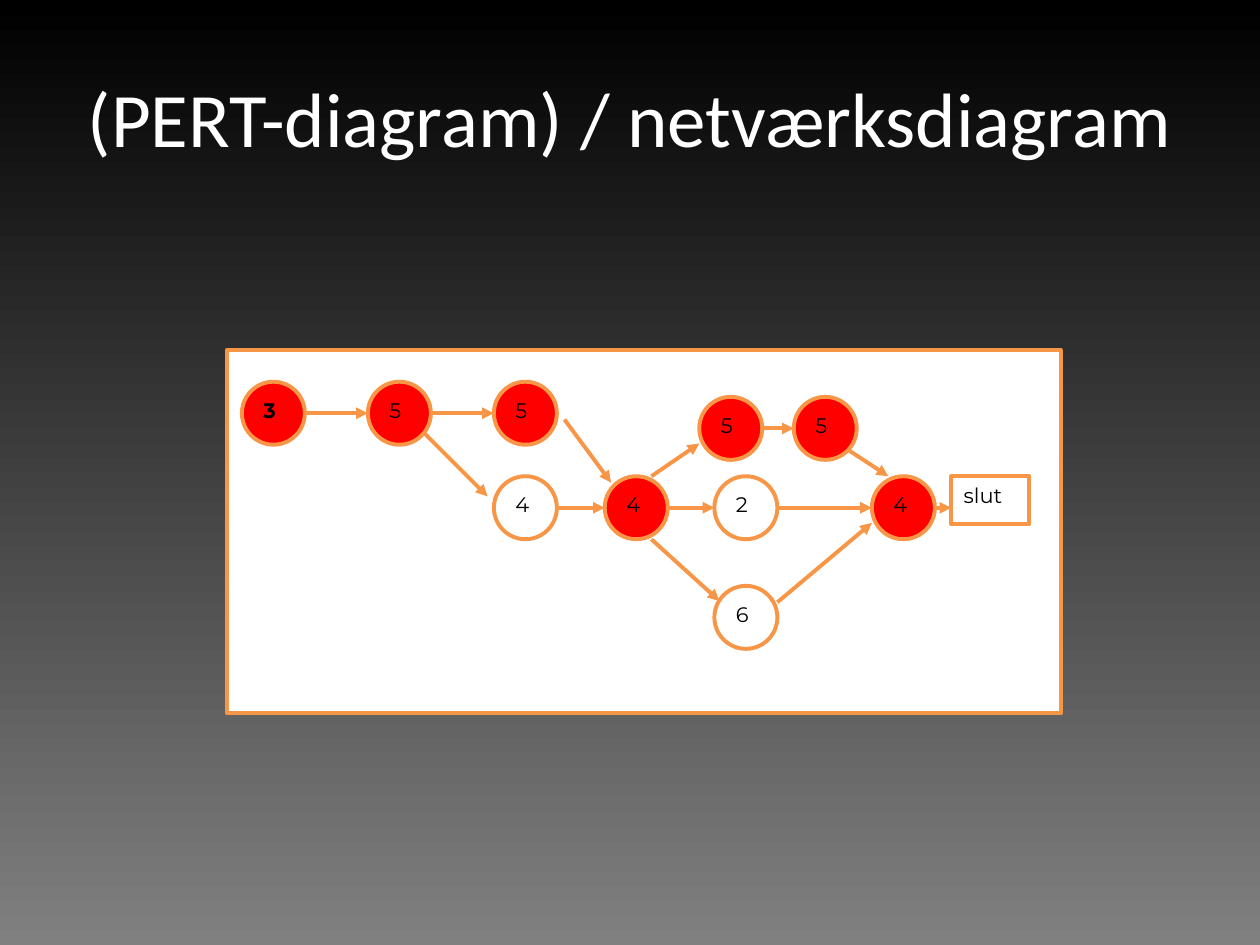
from pptx import Presentation
from pptx.dml.color import RGBColor
from pptx.enum.shapes import MSO_CONNECTOR, MSO_SHAPE
from pptx.enum.text import MSO_ANCHOR, PP_ALIGN
from pptx.oxml.ns import qn
from pptx.util import Inches, Pt
from lxml.etree import SubElement

ORANGE, RED, WHITE, BLACK = "F79646", "FF0000", "FFFFFF", "000000"
DIAMETER = 0.5
TOP_ROW, UPPER_ROW, MIDDLE_ROW, BOTTOM_ROW = 3.03, 3.15, 3.78, 4.65

# left, top, duration, fill
TASKS = [
    (1.92, TOP_ROW, "3", RED),
    (2.92, TOP_ROW, "5", RED),
    (3.92, TOP_ROW, "5", RED),
    (3.92, MIDDLE_ROW, "4", WHITE),
    (4.8, MIDDLE_ROW, "4", RED),
    (5.55, UPPER_ROW, "5", RED),
    (6.3, UPPER_ROW, "5", RED),
    (5.67, MIDDLE_ROW, "2", WHITE),
    (5.67, BOTTOM_ROW, "6", WHITE),
    (6.92, MIDDLE_ROW, "4", RED),
]

# row top, start x, end x
LEVEL_ARROWS = [
    (TOP_ROW, 2.42, 2.92),
    (TOP_ROW, 3.42, 3.92),
    (UPPER_ROW, 6.05, 6.3),
    (MIDDLE_ROW, 4.42, 4.8),
    (MIDDLE_ROW, 5.3, 5.67),
    (MIDDLE_ROW, 6.17, 6.92),
    (MIDDLE_ROW, 7.42, 7.55),
]

# start x, start y, end x, end y
SLOPING_ARROWS = [
    (3.37, 3.44, 3.87, 3.94),
    (4.48, 3.33, 4.85, 3.83),
    (5.17, 3.78, 5.55, 3.52),
    (5.17, 4.28, 5.71, 4.77),
    (6.17, 4.78, 6.92, 4.15),
    (6.67, 3.53, 7.05, 3.78),
]


def rgb(color):
    return RGBColor.from_string(color)


def set_background(s):
    fill = s.background.fill
    fill.gradient()
    fill.gradient_angle = 90
    for stop, color in zip(fill.gradient_stops, ("808080", BLACK)):
        stop.color.rgb = rgb(color)


def format_run(r, font, size, color, bold=False):
    r.font.name = font
    r.font.size = Pt(size)
    r.font.bold = bold
    r.font.color.rgb = rgb(color)


def set_title(s, text):
    title = s.shapes.title
    title.left, title.top = Inches(0.5), Inches(0.3)
    title.width, title.height = Inches(9), Inches(1.25)
    tf = title.text_frame
    tf.text = text
    tf.vertical_anchor = MSO_ANCHOR.MIDDLE
    p = tf.paragraphs[0]
    p.alignment = PP_ALIGN.CENTER
    format_run(p.runs[0], "Calibri", 44, WHITE)


def add_box(group, kind, left, top, width, height, fill, text="", bold=False):
    sp = group.shapes.add_shape(
        kind, Inches(left), Inches(top), Inches(width), Inches(height))
    sp.shadow.inherit = False
    sp.fill.solid()
    sp.fill.fore_color.rgb = rgb(fill)
    sp.line.color.rgb = rgb(ORANGE)
    sp.line.width = Pt(2.25)
    if text:
        tf = sp.text_frame
        tf.text = text
        tf.vertical_anchor = MSO_ANCHOR.TOP
        p = tf.paragraphs[0]
        p.alignment = PP_ALIGN.LEFT
        format_run(p.runs[0], "Montserrat", 12, BLACK, bold)


def add_arrow(group, x1, y1, x2, y2):
    line = group.shapes.add_connector(
        MSO_CONNECTOR.STRAIGHT, Inches(x1), Inches(y1), Inches(x2), Inches(y2))
    line.line.color.rgb = rgb(ORANGE)
    line.line.width = Pt(2.25)
    SubElement(line.line._get_or_add_ln(), qn("a:tailEnd"), type="triangle")
    SubElement(line._element.spPr, qn("a:effectLst"))


def add_network(s):
    group = s.shapes.add_group_shape()
    add_box(group, MSO_SHAPE.RECTANGLE, 1.8, 2.78, 6.62, 2.88, WHITE)
    for row, x1, x2 in LEVEL_ARROWS:
        y = row + DIAMETER / 2
        add_arrow(group, x1, y, x2, y)
    for ends in SLOPING_ARROWS:
        add_arrow(group, *ends)
    for i, (left, top, duration, fill) in enumerate(TASKS):
        add_box(group, MSO_SHAPE.OVAL, left, top, DIAMETER, DIAMETER, fill,
                duration, bold=i == 0)
    add_box(group, MSO_SHAPE.RECTANGLE, 7.55, MIDDLE_ROW, 0.62, 0.38, WHITE, "slut")


def main():
    prs = Presentation()
    prs.slide_width, prs.slide_height = Inches(10), Inches(7.5)
    s = prs.slides.add_slide(prs.slide_layouts[5])
    set_background(s)
    set_title(s, "(PERT-diagram) / netværksdiagram")
    add_network(s)
    prs.save("out.pptx")


if __name__ == "__main__":
    main()
